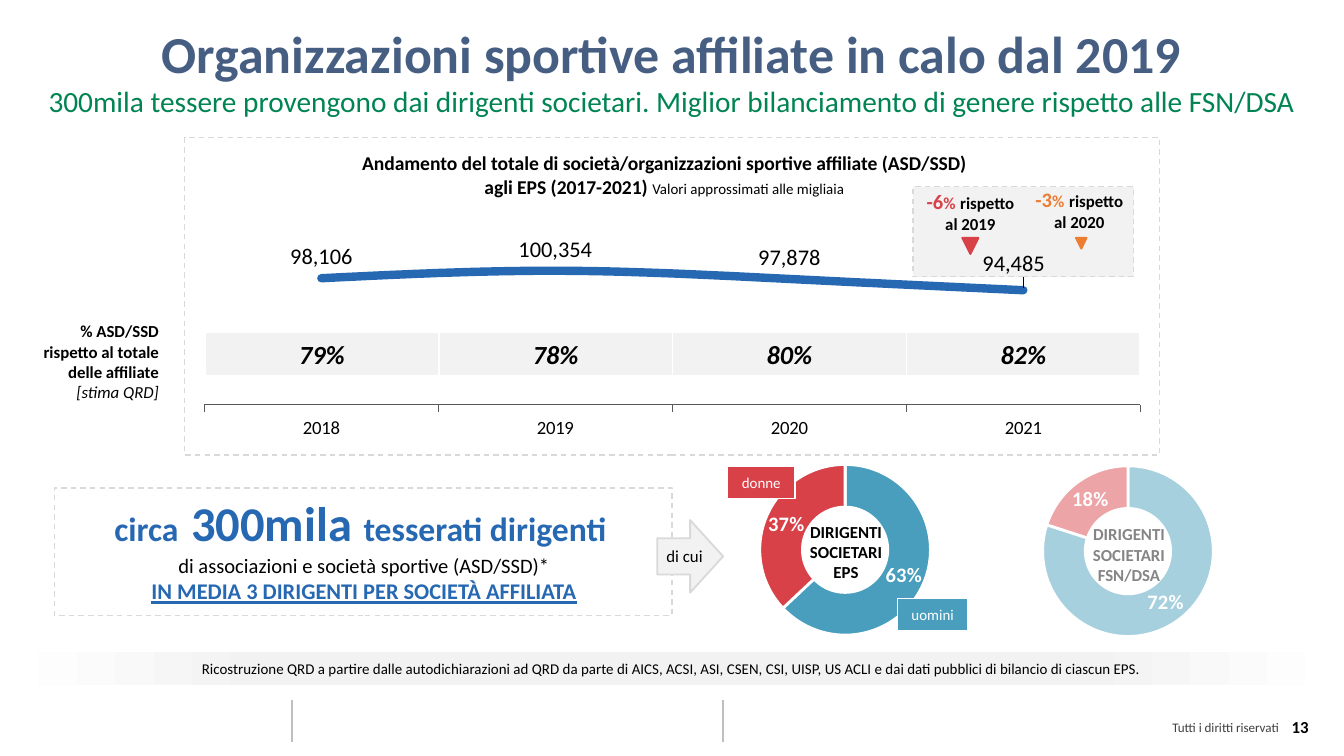
from dataclasses import dataclass
from typing import Optional

from lxml import etree
from pptx import Presentation
from pptx.chart import data
from pptx.dml import color
from pptx.enum import chart as ce, dml, shapes, text
from pptx.oxml import ns, parse_xml
from pptx.util import Emu, Pt

SCALE = 4572  # 200 px to the inch
FONT = "Calibri"
BLUE, RED, TEAL, ORANGE = "2668B2", "D94149", "499EBD", "ED7D31"
BLACK, WHITE, PALE, EDGE = "000000", "FFFFFF", "F2F2F2", "D9D9D9"
LEFT, MID, RIGHT = text.PP_ALIGN.LEFT, text.PP_ALIGN.CENTER, text.PP_ALIGN.RIGHT
KIND = shapes.MSO_SHAPE


@dataclass
class Box:
    x: int
    y: int
    w: int
    h: int

    def emu(self) -> list:
        return [px(n) for n in (self.x, self.y, self.w, self.h)]


@dataclass
class Run:
    words: str
    size: float
    hue: str = BLACK
    bold: bool = False
    ital: bool = False
    under: bool = False


@dataclass
class Ring:
    box: Box
    vals: tuple
    label: str
    spot: Box


@dataclass
class Drop:
    rate: str
    year: str
    hue: str
    spot: Box
    mark: Box


def px(n: int) -> Emu:
    return Emu(n * SCALE)


def rgb(code: str) -> color.RGBColor:
    return color.RGBColor.from_string(code)


def style(font, size: float, hue: str, bold: bool = False) -> None:
    font.name, font.size, font.bold = FONT, Pt(size), bold
    font.color.rgb = rgb(hue)


def write(frame, paras: list, align=MID) -> None:
    for i, runs in enumerate(paras):
        para = frame.paragraphs[0] if i == 0 else frame.add_paragraph()
        para.alignment = align
        for item in runs:
            run = para.add_run()
            run.text = item.words
            style(run.font, item.size, item.hue, item.bold)
            run.font.italic, run.font.underline = item.ital, item.under


def label(box: Box, paras: list, align=MID, wrap: bool = True):
    frame = slide.shapes.add_textbox(*box.emu()).text_frame
    frame.word_wrap = wrap
    write(frame, paras, align)
    return frame


def shape(box: Box, fill: Optional[str], line: Optional[str], width: float = 0.75,
          dash: bool = False, kind=KIND.RECTANGLE):
    item = slide.shapes.add_shape(kind, *box.emu())
    item.shadow.inherit = False
    if fill:
        item.fill.solid()
        item.fill.fore_color.rgb = rgb(fill)
    else:
        item.fill.background()
    if line:
        item.line.color.rgb = rgb(line)
        item.line.width = Pt(width)
        if dash:
            item.line.dash_style = dml.MSO_LINE.DASH
    else:
        item.line.fill.background()
    return item


def manual(**parts):
    """Build a chart layout element from its parts, in order."""
    body = "".join(f'<c:{k} val="{v}"/>' for k, v in parts.items())
    return parse_xml(f'<c:layout {ns.nsdecls("c")}><c:manualLayout>{body}'
                     '</c:manualLayout></c:layout>')


def place(chart, x: float, y: float, w: float, h: float) -> None:
    area = chart._chartSpace.chart.plotArea
    for old in area.findall(ns.qn("c:layout")):
        area.remove(old)
    area.insert(0, manual(layoutTarget="inner", xMode="edge", yMode="edge", x=x, y=y, w=w, h=h))


def plot(kind, box: Box, cats: tuple, vals: tuple, form: str, size: int, hue: str, bold: bool):
    feed = data.CategoryChartData(number_format=form)
    feed.categories = cats
    feed.add_series("Series 1", vals)
    chart = slide.shapes.add_chart(kind, *box.emu(), feed).chart
    chart.has_legend = chart.has_title = False
    style(chart.font, 10, BLACK)
    tags = chart.plots[0].series[0].data_labels
    tags.show_value = True
    tags.number_format, tags.number_format_is_linked = form, False
    style(tags.font, size, hue, bold)
    return chart


def trend(box: Box) -> None:
    chart = plot(ce.XL_CHART_TYPE.LINE_MARKERS, box, ("2018", "2019", "2020", "2021"),
                 (98106, 100354, 97878, 94485), "#,##0", 12, BLACK, False)
    place(chart, 0.02, 0.1, 0.96, 0.66)
    chart.plots[0].vary_by_categories = False
    axis = chart.value_axis
    axis.minimum_scale, axis.maximum_scale = 60000, 110000
    axis.has_major_gridlines = axis.visible = False
    base = chart.category_axis
    base.major_tick_mark = ce.XL_TICK_MARK.OUTSIDE
    base.format.line.color.rgb = rgb("595959")
    base.format.line.width = Pt(0.75)
    style(base.tick_labels.font, 10, BLACK)
    line = chart.plots[0].series[0]
    line.smooth = True
    line.data_labels.position = ce.XL_LABEL_POSITION.ABOVE
    line.format.line.color.rgb = rgb(BLUE)
    line.format.line.width = Pt(4.5)
    line._element.find(".//" + ns.qn("a:ln")).set("cap", "rnd")
    line.marker.style, line.marker.size = ce.XL_MARKER_STYLE.CIRCLE, 3
    line.marker.format.fill.solid()
    line.marker.format.fill.fore_color.rgb = rgb(BLUE)
    line.marker.format.line.color.rgb = rgb(BLUE)
    # Nudge the last value up and left
    last = line.points[3].data_label
    style(last.font, 12, BLACK)
    last.position = ce.XL_LABEL_POSITION.ABOVE
    node = line._element.find(".//" + ns.qn("c:dLbl"))
    node.insert(1, manual(x=-0.01, y=-0.02))
    node.insert(2, parse_xml(f'<c:numFmt {ns.nsdecls("c")} formatCode="#,##0" sourceLinked="0"/>'))


def donut(ring: Ring) -> None:
    chart = plot(ce.XL_CHART_TYPE.DOUGHNUT, ring.box, ("1", "2"), ring.vals, "0%", 11, WHITE, True)
    place(chart, 0.21, 0.02, 0.57, 0.97)
    chart._chartSpace.find(".//" + ns.qn("c:holeSize")).set("val", "60")
    for i, hue in enumerate((TEAL, RED)):
        part = chart.plots[0].series[0].points[i].format
        part.fill.solid()
        part.fill.fore_color.rgb = rgb(hue)
        part.line.color.rgb = rgb(WHITE)
        part.line.width = Pt(1.5)


def shares(box: Box, vals: tuple) -> None:
    grid = slide.shapes.add_table(1, len(vals), *box.emu()).table
    grid.first_row = grid.horz_banding = False
    for i, val in enumerate(vals):
        grid.columns[i].width = px(box.w // len(vals))
        cell = grid.cell(0, i)
        cell.vertical_anchor = text.MSO_ANCHOR.MIDDLE
        cell.fill.solid()
        cell.fill.fore_color.rgb = rgb(PALE)
        write(cell.text_frame, [[Run(val, 14, bold=True, ital=True)]])
        for j, (side, pts) in enumerate((("L", 1), ("R", 1), ("T", 1), ("B", 3))):
            cell._tc.get_or_add_tcPr().insert(j, parse_xml(
                f'<a:ln{side} {ns.nsdecls("a")} w="{Pt(pts)}"><a:solidFill>'
                f'<a:srgbClr val="{WHITE}"/></a:solidFill></a:ln{side}>'))


def fade(item, stops: tuple) -> None:
    item.fill.gradient()
    item.fill.gradient_angle = 0
    group = item._element.spPr.find(".//" + ns.qn("a:gsLst"))
    group.clear()
    for pos, hue in stops:
        stop = etree.SubElement(group, ns.qn("a:gs"), pos=str(pos * 1000))
        etree.SubElement(stop, ns.qn("a:srgbClr"), val=hue)


def tag(box: Box, words: str, fill: str) -> None:
    frame = shape(box, fill, WHITE).text_frame
    frame.word_wrap = False
    write(frame, [[Run(words, 8, WHITE)]])


def drop(item: Drop) -> None:
    shape(item.mark, item.hue, item.hue, 1, kind=KIND.ISOSCELES_TRIANGLE).rotation = 180
    label(item.spot, [[Run(item.rate, 11, item.hue, True), Run("%", 9, item.hue, True),
                       Run(" ", 11, item.hue, True), Run("rispetto", 9, bold=True)],
                      [Run(f"al {item.year}", 9, bold=True)]])


deck = Presentation()
deck.slide_width, deck.slide_height = px(2000), px(1125)
slide = deck.slides.add_slide(deck.slide_layouts[6])

# Footer
foot = label(Box(1537, 1063, 380, 38), [[Run("Tutti i diritti riservati", 7, "404040")]], RIGHT)
foot.margin_left = foot.margin_right = px(14)
foot.margin_top = foot.margin_bottom = px(8)
for x in (435, 1076):
    rule = slide.shapes.add_connector(shapes.MSO_CONNECTOR.STRAIGHT,
                                      px(x), px(1042), px(x), px(1104))
    rule.line.color.rgb = rgb("BFBFBF")
    rule.line.width = Pt(1)
    etree.SubElement(rule._element.spPr, ns.qn("a:effectLst"))
label(Box(1863, 1057, 104, 60), [[Run("13", 9, bold=True)]], RIGHT)

# Title
label(Box(0, 22, 2000, 164), [
    [Run("Organizzazioni sportive affiliate in calo dal 2019", 27.8, "465E82", True)],
    [Run("300mila tessere provengono dai dirigenti societari. Miglior bilanciamento "
         "di genere rispetto alle FSN/DSA", 15.7, "008452")]])

# Trend panel
shape(Box(1359, 278, 328, 134), PALE, EDGE, dash=True)
trend(Box(275, 318, 1451, 374))
shape(Box(275, 205, 1451, 472), None, EDGE, dash=True)
label(Box(502, 215, 974, 90), [[
    Run("Andamento del totale di società/organizzazioni sportive affiliate (ASD/SSD) "
        "agli EPS (2017-2021) ", 10.5, bold=True),
    Run("Valori approssimati alle migliaia", 8)]])
shares(Box(305, 495, 1392, 66), ("79%", "78%", "80%", "82%"))
label(Box(2, 468, 254, 142), [
    [Run("% ASD/SSD", 9, bold=True)],
    [Run("rispetto al totale delle affiliate", 9, bold=True)],
    [Run("[stima QRD]", 9, ital=True)]], RIGHT)

# Members panel
label(Box(84, 713, 916, 238), [
    [Run("circa", 18, BLUE, True), Run(" ", 30, BLUE, True),
     Run("300mila ", 26, BLUE, True), Run("tesserati dirigenti ", 18, BLUE, True)],
    [Run("di associazioni e società sportive (ASD/SSD)*", 11)],
    [Run("IN MEDIA 3 DIRIGENTI PER SOCIETÀ AFFILIATA", 12, BLUE, True, under=True)]])
shape(Box(81, 726, 919, 190), None, EDGE, dash=True)
shape(Box(978, 774, 98, 108), PALE, EDGE, 1, kind=KIND.RIGHT_ARROW)
label(Box(972, 802, 96, 50), [[Run("di cui", 9)]], LEFT, False)

# Source strip
strip = shape(Box(0, 971, 2000, 48), PALE, None)
fade(strip, ((0, WHITE), (20, PALE), (80, PALE), (100, WHITE)))
write(strip.text_frame, [[Run(
    "Ricostruzione QRD a partire dalle autodichiarazioni ad QRD da parte di AICS, ACSI, ASI, CSEN, "
    "CSI, UISP, US ACLI e dai dati pubblici di bilancio di ciascun EPS.", 8)]])

# Gender rings
for ring in (Ring(Box(1028, 686, 464, 262), (0.63, 0.37), "EPS", Box(1182, 766, 154, 112)),
             Ring(Box(1449, 688, 464, 262), (0.72, 0.18), "FSN/DSA", Box(1603, 770, 154, 112))):
    donut(ring)
    label(ring.spot, [[Run(f"DIRIGENTI SOCIETARI {ring.label}", 9, bold=True)]])
tag(Box(1083, 694, 100, 48), "donne", RED)
tag(Box(1336, 891, 104, 48), "uomini", TEAL)
veil = shape(Box(1500, 686, 388, 264), WHITE, WHITE, 1)
tint = veil._element.spPr.find(ns.qn("a:solidFill"))[0]
etree.SubElement(tint, ns.qn("a:alpha"), val="52000")

# Drops against earlier years
for item in (Drop("-3", "2020", ORANGE, Box(1505, 268, 202, 88), Box(1601, 354, 16, 16)),
             Drop("-6", "2019", RED, Box(1343, 272, 202, 88), Box(1432, 354, 24, 24))):
    drop(item)

deck.save("out.pptx")
